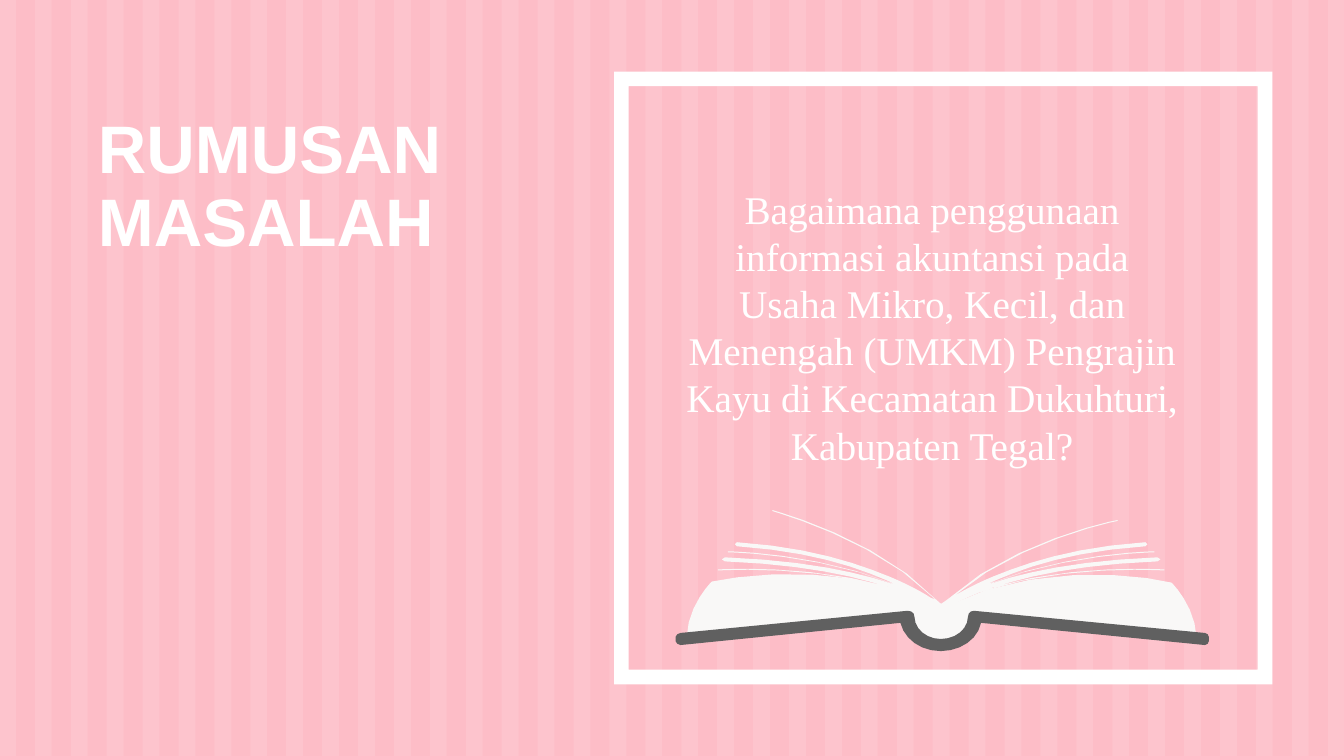
from dataclasses import dataclass
from math import dist

from lxml import etree
from pptx import Presentation
from pptx import util as u
from pptx.dml.color import RGBColor
from pptx.enum import shapes, text
from pptx.oxml.ns import qn

# The slide is a grid of 1333 columns and 750 rows
COLUMNS, ROWS = 1333, 750
CELL = u.Inches(0.01)
COLORS = {"pink": "FDBDC7", "white": "FFFFFF", "paper": "F9F8F7", "cover": "606060"}

Point = tuple[float, float]


@dataclass(frozen=True)
class Box:
    column: float
    row: float
    columns: float
    rows: float


@dataclass(frozen=True)
class TextStyle:
    font: str
    size: int
    bold: bool
    align: text.PP_ALIGN
    anchor: text.MSO_ANCHOR
    auto_size: text.MSO_AUTO_SIZE
    line_spacing: float


@dataclass(frozen=True)
class Outline:
    """A closed outline: M, L and C commands in grid units."""
    commands: str
    color: str
    mirrored: bool = False


TITLE_STYLE = TextStyle("Arial", 48, True, text.PP_ALIGN.LEFT, text.MSO_ANCHOR.MIDDLE,
                        text.MSO_AUTO_SIZE.NONE, 0.9)
QUESTION_STYLE = TextStyle("Times New Roman", 28, False, text.PP_ALIGN.CENTER,
                           text.MSO_ANCHOR.TOP, text.MSO_AUTO_SIZE.SHAPE_TO_FIT_TEXT, 1.0)

# Stripes: equal bands at a fixed pitch
STRIPE_COUNT, STRIPE_PITCH, STRIPE_WIDTH, STRIPE_START = 38, 35.62, 16.7, -1
STRIPE_OPACITY = 11

# Book: the left fan of leaves mirrors the right one, except for its top leaf
MIRROR_SUM = 1867
STEP_LENGTH, MAX_STEPS = 8, 6
FAN_LOWER = """M 1155 565 C 1154 565 1063 559 983 583 L 985 583
C 1017 572 1070 560 1148 557 L 1151 555 L 1148 553
C 1069 556 1015 568 983 579 L 973 582 C 1055 549 1144 548 1145 548
L 1145 547 C 1144 547 1058 548 978 580 L 987 576
C 1019 562 1064 547 1136 542 L 1138 540 L 1136 538
C 1063 543 1017 559 985 572 C 966 580 953 587 944 593"""
FAN_TOP_RIGHT = "C 1008 537 1107 517 1108 517 L 1109 516 L 1108 516 C 1107 516 1002 537 938 596"
FAN_TOP_LEFT = "L 939 595 C 999 534 1100 508 1101 507 L 1101 506 C 1099 507 994 534 935 598"
FAN_SPINE = "L 932 600 L 932 603 L 935 606 C 935 606 946 598 971 588 C 1053 559 1154 566 1155 566"

BOOK = [
    Outline("""M 1162 578 C 1122 568 1017 560 935 603 L 935 602 C 852 559 747 568 706 577
    C 706 577 682 600 681 633 L 901 609 C 901 624 916 637 934 637 L 934 638
    C 952 638 967 625 967 610 L 1187 634 C 1186 601 1162 578 1162 578""", "paper"),
    Outline("""M 933 646 C 913 646 897 634 893 618 L 675 640 C 673 640 670 638 670 636
    L 670 632 C 670 630 673 628 675 628 L 900 606 C 904 606 907 608 907 612
    C 907 624 919 634 933 634 C 948 634 960 624 960 612 C 960 608 963 606 966 606
    L 1195 628 C 1197 628 1199 630 1199 632 L 1199 636 C 1199 638 1197 640 1195 640
    L 973 618 C 970 634 953 646 933 646""", "cover"),
    Outline(f"{FAN_LOWER} {FAN_TOP_RIGHT} {FAN_SPINE}", "paper"),
    Outline(f"{FAN_LOWER} {FAN_TOP_LEFT} {FAN_SPINE}", "paper", mirrored=True),
]


def bezier(start: Point, first: Point, second: Point, end: Point) -> list[Point]:
    """Sample a curve, with more points the longer it is."""
    steps = min(MAX_STEPS, 1 + int(dist(start, end) / STEP_LENGTH * 2))
    controls = (start, first, second, end)
    points = []
    for step in range(1, steps + 1):
        t = step / steps
        weights = ((1 - t) ** 3, 3 * t * (1 - t) ** 2, 3 * t * t * (1 - t), t ** 3)
        points.append((sum(w * p[0] for w, p in zip(weights, controls)),
                       sum(w * p[1] for w, p in zip(weights, controls))))
    return points


def trace(outline: Outline) -> list[Point]:
    """Turn the commands of an outline into the points of a polygon."""
    points: list[Point] = []
    tokens = iter(outline.commands.split())
    for command in tokens:
        pairs = [(float(next(tokens)), float(next(tokens)))
                 for _ in range(3 if command == "C" else 1)]
        points += bezier(points[-1], *pairs) if command == "C" else pairs
    if outline.mirrored:
        points = [(MIRROR_SUM - x, y) for x, y in points]
    return points


def paint(shape, color: str) -> None:
    shape.shadow.inherit = False
    shape.fill.solid()
    shape.fill.fore_color.rgb = RGBColor.from_string(COLORS[color])
    shape.line.fill.background()


def draw_polygons(slide, polygons: list[list[Point]], color: str):
    """Draw all polygons as one freeform shape."""
    scaled = [[(x * CELL, y * CELL) for x, y in polygon] for polygon in polygons]
    builder = slide.shapes.build_freeform(*scaled[0][0])
    for index, polygon in enumerate(scaled):
        if index:
            builder.move_to(*polygon[0])
        builder.add_line_segments(polygon[1:], close=True)
    shape = builder.convert_to_shape()
    paint(shape, color)
    return shape


def place(shape, box: Box) -> None:
    shape.left, shape.top = int(box.column * CELL), int(box.row * CELL)
    shape.width, shape.height = int(box.columns * CELL), int(box.rows * CELL)


def write(placeholder, box: Box, content: str, style: TextStyle) -> None:
    place(placeholder, box)
    frame = placeholder.text_frame
    frame.text = content
    frame.word_wrap = True
    frame.auto_size = style.auto_size
    frame.vertical_anchor = style.anchor
    paragraph = frame.paragraphs[0]
    paragraph.alignment = style.align
    paragraph.line_spacing = style.line_spacing
    paragraph.space_before = u.Pt(0)
    font = paragraph.runs[0].font
    font.name, font.size, font.bold = style.font, u.Pt(style.size), style.bold
    font.color.rgb = RGBColor.from_string(COLORS["white"])


def remove_bullet(paragraph) -> None:
    properties = paragraph._p.get_or_add_pPr()
    properties.set("marL", "0")
    properties.set("indent", "0")
    etree.SubElement(properties, qn("a:buNone"))


def draw_stripes(slide):
    bands = []
    for index in range(STRIPE_COUNT):
        left = STRIPE_START + index * STRIPE_PITCH
        right = min(left + STRIPE_WIDTH, COLUMNS)
        left = max(left, 0)
        bands.append([(left, 0), (right, 0), (right, ROWS), (left, ROWS)])
    stripes = draw_polygons(slide, bands, "white")
    color = stripes.element.spPr.find(qn("a:solidFill"))[0]
    etree.SubElement(color, qn("a:alpha")).set("val", str(STRIPE_OPACITY * 1000))
    return stripes


def main() -> None:
    presentation = Presentation()
    presentation.slide_width, presentation.slide_height = COLUMNS * CELL, ROWS * CELL
    slide = presentation.slides.add_slide(presentation.slide_layouts[1])
    slide.background.fill.solid()
    slide.background.fill.fore_color.rgb = RGBColor.from_string(COLORS["pink"])

    # Title and question, in front of the stripes
    title, question = slide.shapes.title, slide.placeholders[1]
    write(title, Box(87, 81, 444, 211), "RUMUSAN MASALAH", TITLE_STYLE)
    write(question, Box(669, 179, 511, 374),
          "Bagaimana penggunaan informasi akuntansi pada Usaha Mikro, Kecil, dan Menengah "
          "(UMKM) Pengrajin Kayu di Kecamatan Dukuhturi, Kabupaten Tegal?", QUESTION_STYLE)
    remove_bullet(question.text_frame.paragraphs[0])
    title.element.addprevious(draw_stripes(slide).element)

    # Open book
    for outline in BOOK:
        draw_polygons(slide, [trace(outline)], outline.color)

    # White frame
    border = slide.shapes.add_shape(shapes.MSO_SHAPE.FRAME, 0, 0, CELL, CELL)
    place(border, Box(609, 71, 653, 608))
    border.adjustments[0] = 0.024
    paint(border, "white")

    presentation.save("out.pptx")


if __name__ == "__main__":
    main()
